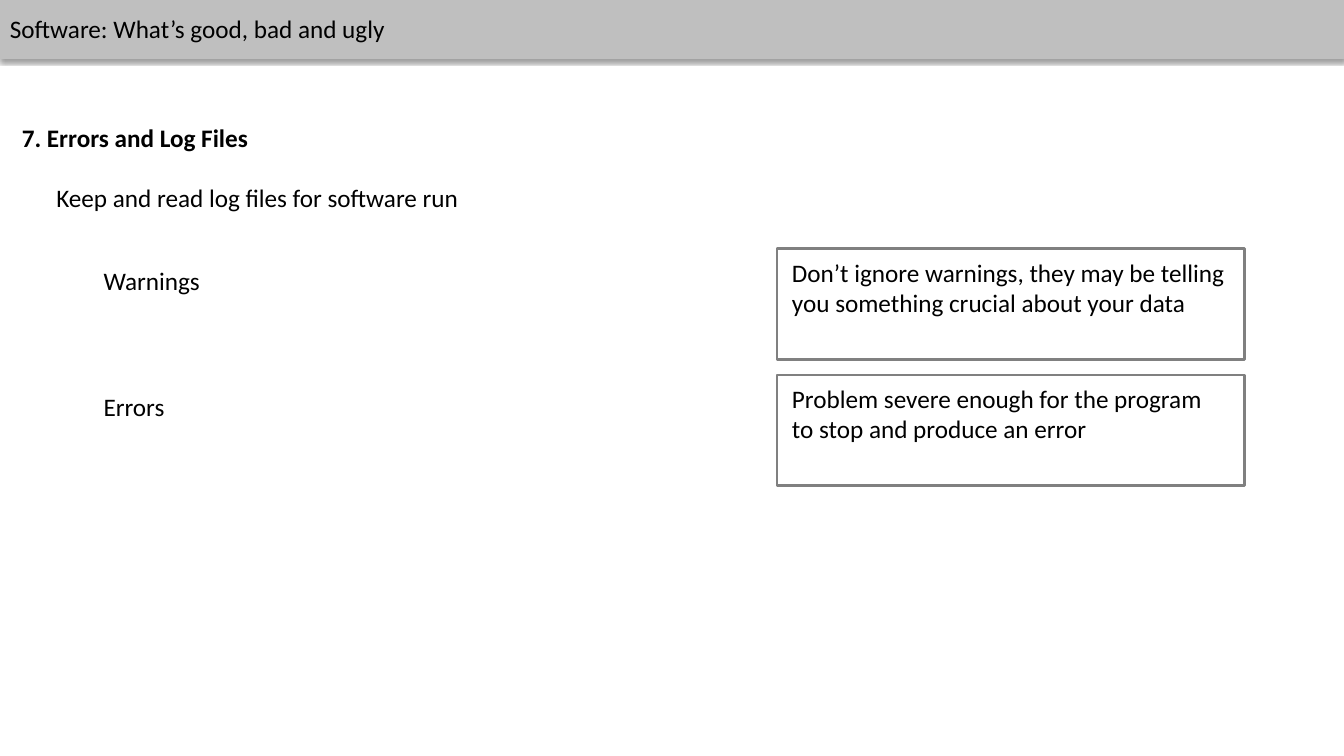
import pptx
import pptx.dml.color
import pptx.enum.shapes
import pptx.enum.text
import pptx.oxml
import pptx.oxml.ns
import pptx.util
from pptx.util import Cm

TITLE = "Software: What’s good, bad and ugly"
# text, left, top, width (cm), bold
HEADINGS = [
    ("7. Errors and Log Files", 0.3, 2.95, 6.27, True),
    ("Keep and read log files for software run", 1.17, 4.47, 10.8, False),
]
TERMS = [
    ("Warnings", 2.97,
     "Don’t ignore warnings, they may be telling you something crucial about your data"),
    ("Errors", 2.06,
     "Problem severe enough for the program to stop and produce an error"),
]

PAGE_WIDTH, PAGE_HEIGHT = 33.87, 19.05
LINE_HEIGHT = 1.02
FRAME_LEFT, FRAME_TOP, FRAME_WIDTH, FRAME_HEIGHT = 19.58, 6.27, 11.79, 2.79
FRAME_STEP = 3.18
TERM_LEFT = 2.36
BLACK, BAR_GREY, FRAME_GREY = "000000", "BFBFBF", "808080"


def color(hex_code):
    return pptx.dml.color.RGBColor.from_string(hex_code)


def write(shape, text, bold=False, wrap=False):
    frame = shape.text_frame
    frame.word_wrap = wrap
    frame.auto_size = pptx.enum.text.MSO_AUTO_SIZE.SHAPE_TO_FIT_TEXT
    para = frame.paragraphs[0]
    para.text = text
    para.alignment = pptx.enum.text.PP_ALIGN.LEFT
    para.font.name = "Calibri"
    para.font.size = pptx.util.Pt(18)
    para.font.bold = bold
    para.font.color.rgb = color(BLACK)


def add_text(page, text, left, top, width, height=LINE_HEIGHT, **style):
    box = page.shapes.add_textbox(Cm(left), Cm(top), Cm(width), Cm(height))
    write(box, text, **style)


def add_rectangle(page, left, top, width, height, line, points, fill=None):
    shape = page.shapes.add_shape(
        pptx.enum.shapes.MSO_SHAPE.RECTANGLE, Cm(left), Cm(top), Cm(width), Cm(height))
    shape.shadow.inherit = False
    shape.line.color.rgb = color(line)
    shape.line.width = pptx.util.Pt(points)
    if fill:
        shape.fill.solid()
        shape.fill.fore_color.rgb = color(fill)
    else:
        shape.fill.background()
    return shape


def add_drop_shadow(shape):
    effects = shape.element.spPr.find(pptx.oxml.ns.qn("a:effectLst"))
    effects.append(pptx.oxml.parse_xml(
        f'<a:outerShdw {pptx.oxml.ns.nsdecls("a")} blurRad="40000" dist="20000" '
        f'dir="5400000" rotWithShape="0"><a:srgbClr val="{BLACK}">'
        '<a:alpha val="38000"/></a:srgbClr></a:outerShdw>'))


def main():
    deck = pptx.Presentation()
    deck.slide_width, deck.slide_height = Cm(PAGE_WIDTH), Cm(PAGE_HEIGHT)
    page = deck.slides.add_slide(deck.slide_layouts[6])

    bar = add_rectangle(page, 0, 0, PAGE_WIDTH, 1.48, BAR_GREY, 0.75, BAR_GREY)
    add_drop_shadow(bar)
    title = add_rectangle(page, 0, 0.21, 10.08, LINE_HEIGHT, BAR_GREY, 0.75)
    write(title, TITLE)

    for text, left, top, width, bold in HEADINGS:
        add_text(page, text, left, top, width, bold=bold)

    for row, (term, term_width, meaning) in enumerate(TERMS):
        top = FRAME_TOP + row * FRAME_STEP
        add_text(page, term, TERM_LEFT, top + 0.28, term_width)
        add_rectangle(page, FRAME_LEFT, top, FRAME_WIDTH, FRAME_HEIGHT, FRAME_GREY, 2)
        add_text(page, meaning, FRAME_LEFT + 0.13, top + 0.08, 11.48, 1.8, wrap=True)

    deck.save("out.pptx")


if __name__ == "__main__":
    main()
